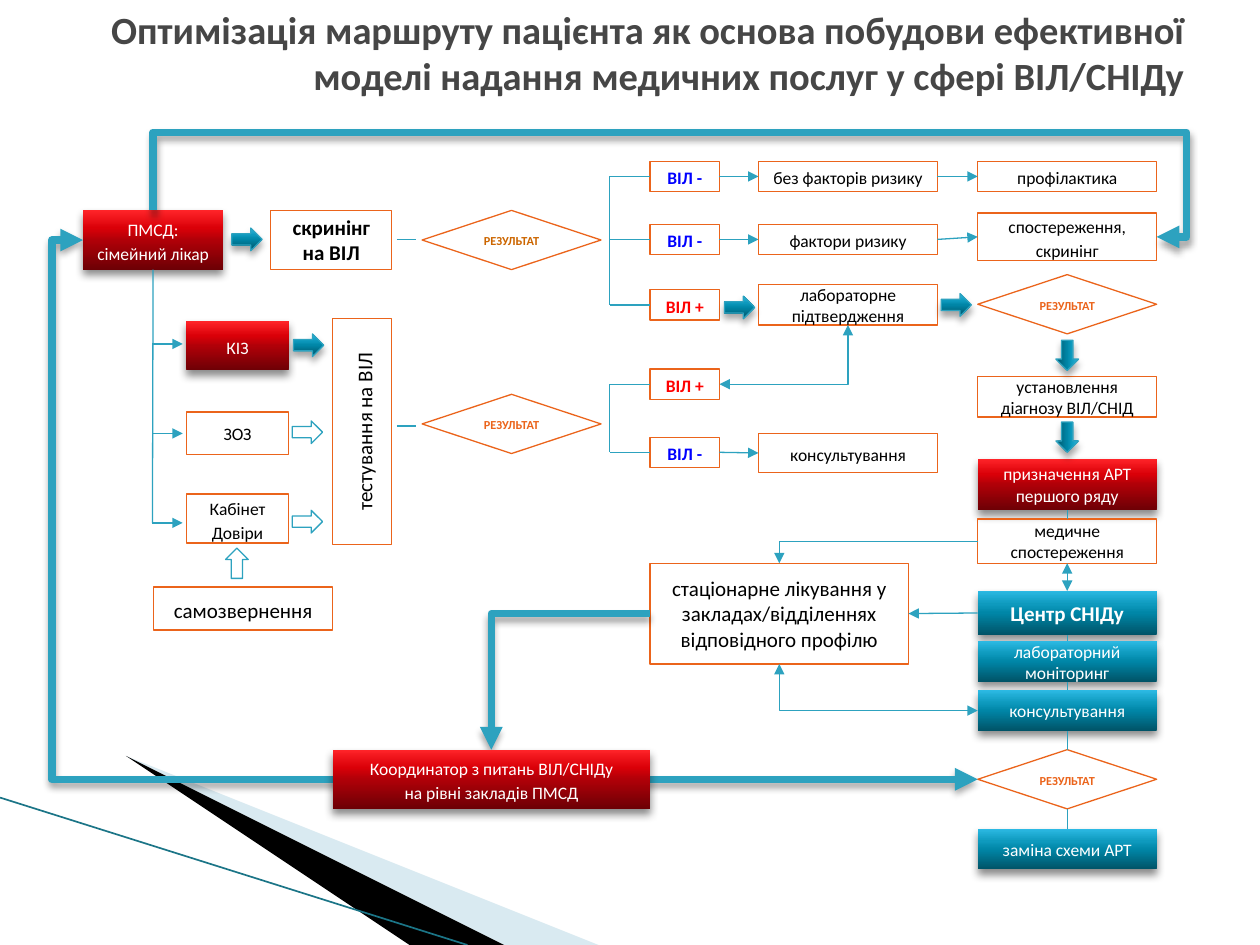
import pptx
import pptx.util
from lxml import etree
from pptx.dml.color import RGBColor
from pptx.enum.shapes import MSO_CONNECTOR, MSO_SHAPE
from pptx.enum.text import MSO_ANCHOR, MSO_AUTO_SIZE, PP_ALIGN
from pptx.oxml.ns import qn

ORANGE = RGBColor(0xEB, 0x64, 0x1B)
OCHRE = RGBColor(0xCC, 0x66, 0x00)
TEAL = RGBColor(0x2D, 0xA2, 0xBF)
DARK_TEAL = RGBColor(0x1B, 0x75, 0x87)
PALE_BLUE = RGBColor(0xA0, 0xCB, 0xDC)
BLACK = RGBColor(0, 0, 0)
WHITE = RGBColor(0xFF, 0xFF, 0xFF)
GREY = RGBColor(0x46, 0x46, 0x46)
BLUE = RGBColor(0, 0, 0xFF)
RED = RGBColor(0xFF, 0, 0)
STOPS = (0, 50, 70, 100)
RED_SHADES = ("6D0005", "B00008", "DA0008", "FF2429")
TEAL_SHADES = ("005367", "0086A7", "0E9ABE", "2CB9E3")

TITLE = ("Оптимізація маршруту пацієнта як основа побудови ефективної "
         "моделі надання медичних послуг у сфері ВІЛ/СНІДу")

# style: size, bold, text colour, gradient shades
STYLES = {
    "plain": (10, False, BLACK, None), "large": (12, False, BLACK, None),
    "strong": (12, True, BLACK, None), "minus": (10, True, BLUE, None),
    "plus": (10, True, RED, None), "result": (7, True, ORANGE, None),
    "first result": (7, True, OCHRE, None), "red": (10, False, WHITE, RED_SHADES),
    "teal": (10, False, WHITE, TEAL_SHADES), "centre": (12, True, WHITE, TEAL_SHADES),
}
# column: left, width
COLUMNS = {
    "entry": (0.66, 1.11), "sites": (1.48, 0.81), "self": (1.22, 1.42),
    "screening": (2.15, 0.96), "testing": (2.64, 0.47), "result": (3.35, 1.42),
    "status": (5.16, 0.55), "risk": (6.02, 1.42), "care": (7.76, 1.42),
    "hospital": (5.16, 2.05), "coordinator": (2.64, 2.52),
}
# name, text, style, column, top, height, line spacing
BOXES = [
    ("doctor", "ПМСД: сімейний лікар", "red", "entry", 1.67, 0.47, 1.15),
    ("screening", "скринінг на ВІЛ", "strong", "screening", 1.67, 0.47, 1),
    ("result 1", "РЕЗУЛЬТАТ", "first result", "result", 1.67, 0.47, 1.15),
    ("infection room", "КІЗ", "red", "sites", 2.55, 0.39, 1.15),
    ("health facility", "ЗОЗ", "plain", "sites", 3.27, 0.34, 1),
    ("trust room", "Кабінет Довіри", "plain", "sites", 3.92, 0.39, 1.15),
    ("self-referral", "самозвернення", "large", "self", 4.66, 0.34, 1.15),
    ("testing", "тестування на ВІЛ", "large", "testing", 2.53, 1.79, 1.15),
    ("result 2", "РЕЗУЛЬТАТ", "result", "result", 3.13, 0.47, 1.15),
    ("minus 1", "ВІЛ -", "minus", "status", 1.28, 0.24, 1.15),
    ("minus 2", "ВІЛ -", "minus", "status", 1.78, 0.24, 1.15),
    ("plus 1", "ВІЛ +", "plus", "status", 2.3, 0.24, 1.15),
    ("plus 2", "ВІЛ +", "plus", "status", 2.93, 0.24, 1.15),
    ("minus 3", "ВІЛ -", "minus", "status", 3.47, 0.24, 1.15),
    ("no risk", "без факторів ризику", "plain", "risk", 1.28, 0.24, 1.15),
    ("risk", "фактори ризику", "plain", "risk", 1.78, 0.24, 1.15),
    ("lab test", "лабораторне підтвердження", "plain", "risk", 2.26, 0.32, 1),
    ("advice", "консультування", "plain", "risk", 3.44, 0.31, 1.15),
    ("prevention", "профілактика", "plain", "care", 1.28, 0.24, 1.15),
    ("observation", "спостереження, скринінг", "plain", "care", 1.69, 0.38, 1.15),
    ("result 3", "РЕЗУЛЬТАТ", "result", "care", 2.18, 0.47, 1.15),
    ("diagnosis", "установлення діагнозу ВІЛ/СНІД", "plain", "care", 2.99, 0.32, 1),
    ("therapy", "призначення АРТ першого ряду", "red", "care", 3.64, 0.41, 1),
    ("follow-up", "медичне спостереження", "plain", "care", 4.12, 0.35, 1),
    ("centre", "Центр СНІДу", "centre", "care", 4.69, 0.35, 1),
    ("monitoring", "лабораторний моніторинг", "teal", "care", 5.09, 0.32, 1),
    ("consulting", "консультування", "teal", "care", 5.48, 0.32, 1),
    ("result 4", "РЕЗУЛЬТАТ", "result", "care", 5.95, 0.47, 1.15),
    ("new scheme", "заміна схеми АРТ", "teal", "care", 6.58, 0.32, 1),
    ("hospital", "стаціонарне лікування у закладах/відділеннях відповідного профілю",
     "large", "hospital", 4.47, 0.8, 1),
    ("coordinator", "Координатор з питань ВІЛ/СНІДу\nна рівні закладів ПМСД",
     "red", "coordinator", 5.95, 0.47, 1.15),
]
# left, top, rotation, filled
BLOCK_ARROWS = [
    (1.84, 1.81, 0, True), (2.33, 2.65, 0, True), (5.75, 2.35, 0, True),
    (7.47, 2.33, 0, True), (8.35, 2.73, 90, True), (8.35, 3.38, 90, True),
    (2.32, 3.34, 0, False), (2.32, 4.05, 0, False), (1.76, 4.38, 270, False),
]
TOP, LEFT, BOTTOM, RIGHT = range(4)
TRUNK, FORK = 1.21, 4.84
# An end is (box name, side) or (x, y); then the arrowheads
STRAIGHT = [
    (("doctor", BOTTOM), (TRUNK, 4.15), ""),
    *(((TRUNK, y), (1.45, y), "tail") for y in (2.73, 3.44, 4.15)),
    *(((3.15, y), (3.3, y), "") for y in (1.9, 3.38)),
    ((FORK, 1.4), (FORK, 2.42), ""), ((FORK, 3.05), (FORK, 3.59), ""),
    *(((FORK, y), (name, LEFT), "") for name, y in (
        ("minus 1", 1.4), ("minus 2", 1.9), ("plus 1", 2.42),
        ("plus 2", 3.05), ("minus 3", 3.59))),
    *(((start, RIGHT), (end, LEFT), "tail") for start, end in (
        ("minus 1", "no risk"), ("minus 2", "risk"), ("minus 3", "advice"),
        ("no risk", "prevention"), ("risk", "observation"))),
    (("centre", LEFT), ("hospital", RIGHT), "tail"),
    (("follow-up", BOTTOM), ("centre", TOP), "head tail"),
    *(((start, BOTTOM), (end, TOP), "") for start, end in (
        ("therapy", "follow-up"), ("centre", "monitoring"), ("monitoring", "consulting"),
        ("consulting", "result 4"), ("result 4", "new scheme"))),
]
# begin, end, arrowheads, width, preset, bend positions (x, then y)
BENT = [
    (("plus 2", RIGHT), ("lab test", BOTTOM), "head tail", 0.75, "bentConnector2", ()),
    (("follow-up", LEFT), ("hospital", TOP), "tail", 0.75, "bentConnector2", ()),
    (("consulting", LEFT), ("hospital", BOTTOM), "head tail", 0.75, "bentConnector2", ()),
    (("observation", RIGHT), ("doctor", TOP), "head", 4.33, "bentConnector4", (9.42, 1.05)),
    (("doctor", LEFT), ("result 4", LEFT), "head tail", 4.33, "bentConnector3", (0.41,)),
    (("hospital", LEFT), ("coordinator", TOP), "tail", 4.33, "bentConnector2", ()),
]
# points, colour, opacity in percent
SWOOSHES = [
    (((0.55, 6.5), (5.95, 7.5), (4.56, 7.5)), PALE_BLUE, 40),
    (((0.53, 6.49), (4.57, 7.5), (3.72, 7.5)), BLACK, 100),
]

deck = pptx.Presentation()
deck.slide_width, deck.slide_height = pptx.util.Inches(10), pptx.util.Inches(7.5)
slide = deck.slides.add_slide(deck.slide_layouts[5])
shapes = slide.shapes
boxes = {}


def inches(*values):
    return [pptx.util.Inches(value) for value in values]


def add_shadow(shape, opacity, blur, distance=3):
    effects = shape._element.spPr.get_or_add_effectLst()
    shadow = etree.SubElement(effects, qn("a:outerShdw"), blurRad=str(blur * 12700),
                              dist=str(distance * 12700), dir="5400000", rotWithShape="0")
    colour = etree.SubElement(shadow, qn("a:srgbClr"), val="000000")
    etree.SubElement(colour, qn("a:alpha"), val=str(opacity * 1000))


def fill_gradient(shape, shades):
    shape.fill.gradient()
    shape.fill.gradient_angle = 90
    stops = shape._element.spPr.find(qn("a:gradFill")).find(qn("a:gsLst"))
    for stop in list(stops):
        stops.remove(stop)
    for position, shade in zip(STOPS, shades):
        stop = etree.SubElement(stops, qn("a:gs"), pos=str(position * 1000))
        etree.SubElement(stop, qn("a:srgbClr"), val=shade)


def add_box(name, text, style, column, top, height, spacing):
    size, bold, colour, shades = STYLES[style]
    left, width = COLUMNS[column]
    kind = MSO_SHAPE.FLOWCHART_DECISION if "result" in style else MSO_SHAPE.FLOWCHART_PROCESS
    box = shapes.add_shape(kind, *inches(left, top, width, height))
    box.shadow.inherit = False
    if shades:
        fill_gradient(box, shades)
        box.line.fill.background()
        add_shadow(box, 45, 5)
    else:
        box.fill.background()
        box.line.color.rgb = ORANGE
        box.line.width = pptx.util.Pt(0.75)
    frame = box.text_frame
    frame.text = text
    frame.word_wrap = True
    frame.vertical_anchor = MSO_ANCHOR.MIDDLE
    if height > width:
        frame._txBody.bodyPr.set("vert", "vert270")
    for para in frame.paragraphs:
        para.alignment = PP_ALIGN.CENTER
        para.line_spacing = float(spacing)
        para.font.name, para.font.size = "Calibri", pptx.util.Pt(size)
        para.font.bold, para.font.color.rgb = bold, colour
    boxes[name] = box


def add_link(begin, end, heads, width=0.75, preset=None, bends=()):
    """Join two ends; bends are absolute positions that set the preset's adjustments."""
    kind = MSO_CONNECTOR.ELBOW if preset else MSO_CONNECTOR.STRAIGHT
    points = [(0, 0) if place[0] in boxes else place for place in (begin, end)]
    link = shapes.add_connector(kind, *inches(*points[0], *points[1]))
    for place, connect in ((begin, link.begin_connect), (end, link.end_connect)):
        if place[0] in boxes:
            connect(boxes[place[0]], place[1])
    link.line.color.rgb = TEAL
    link.line.width = pptx.util.Pt(width)
    properties = link._element.spPr
    for head in heads.split():
        etree.SubElement(link.line._get_or_add_ln(), qn(f"a:{head}End"), type="triangle")
    etree.SubElement(properties, qn("a:effectLst"))
    if width > 1:
        add_shadow(link, 35, 4)
    if preset:
        geometry = properties.find(qn("a:prstGeom"))
        geometry.set("prst", preset)
        guides = geometry.find(qn("a:avLst"))
        spans = ((link.begin_x, link.end_x), (link.begin_y, link.end_y))
        for number, (bend, (start, stop)) in enumerate(zip(bends, spans), 1):
            share = round((pptx.util.Inches(bend) - start) / (stop - start) * 100000)
            etree.SubElement(guides, qn("a:gd"), name=f"adj{number}", fmla=f"val {share}")


for points, colour, opacity in SWOOSHES:
    builder = shapes.build_freeform(*points[0], scale=pptx.util.Inches(1))
    builder.add_line_segments(points[1:])
    swoosh = builder.convert_to_shape()
    swoosh.shadow.inherit = False
    swoosh.fill.solid()
    swoosh.fill.fore_color.rgb = colour
    swoosh.line.fill.background()
    tint = swoosh._element.spPr.find(qn("a:solidFill"))[0]
    etree.SubElement(tint, qn("a:alpha"), val=str(opacity * 1000))
add_link((0, 6.33), (3.71, 7.5), "", 0.95)
shapes[-1].line.color.rgb = DARK_TEAL

title = shapes.title
title.left, title.top, title.width, title.height = inches(0.5, 0.17, 9, 0.49)
title.text_frame.text = TITLE
title.text_frame.auto_size = MSO_AUTO_SIZE.NONE
title.text_frame.vertical_anchor = MSO_ANCHOR.MIDDLE
heading = title.text_frame.paragraphs[0]
heading.alignment = PP_ALIGN.RIGHT
heading.font.name, heading.font.size = "Calibri", pptx.util.Pt(22)
heading.font.bold, heading.font.color.rgb = True, GREY

for row in BOXES:
    add_box(*row)
for left, top, rotation, filled in BLOCK_ARROWS:
    arrow = shapes.add_shape(MSO_SHAPE.RIGHT_ARROW, *inches(left, top, 0.24, 0.18))
    arrow.rotation = rotation
    arrow.shadow.inherit = False
    arrow.line.color.rgb = TEAL
    arrow.line.width = pptx.util.Pt(0.75)
    if filled:
        fill_gradient(arrow, TEAL_SHADES)
        add_shadow(arrow, 35, 4)
    else:
        arrow.fill.background()
for link_row in STRAIGHT + BENT:
    add_link(*link_row)
# The coordinator box lies over the long route that passes behind it
shapes._spTree.append(boxes["coordinator"]._element)
deck.save("out.pptx")
